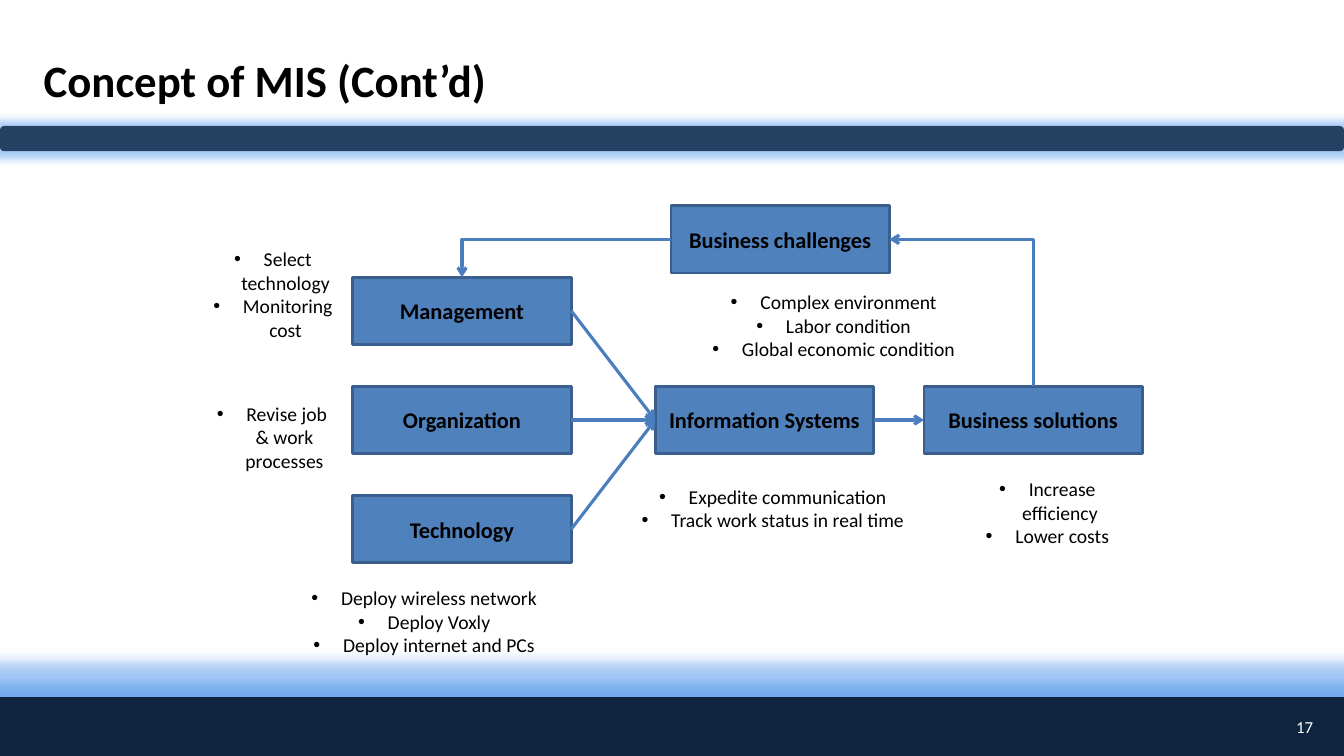
from pptx import Presentation
from pptx.dml.color import RGBColor
from pptx.enum.shapes import MSO_CONNECTOR as CONN, MSO_SHAPE as SHAPE
from pptx.enum.text import MSO_ANCHOR as ANCHOR, PP_ALIGN as ALIGN
from pptx.oxml.ns import qn
from pptx.util import Emu, Pt
from lxml.etree import SubElement

SCALE = 9525  # EMU in one px
FONT = "Calibri"
BLACK = RGBColor(0x00, 0x00, 0x00)
WHITE = RGBColor(0xFF, 0xFF, 0xFF)
NAVY = RGBColor(0x0F, 0x24, 0x3E)
SLATE = RGBColor(0x25, 0x40, 0x61)
GLOW = RGBColor(0x25, 0x7C, 0xE6)
BOX_FILL = RGBColor(0x4F, 0x81, 0xBD)
BOX_LINE = RGBColor(0x3A, 0x5F, 0x8C)
ARROW = RGBColor(0x4B, 0x7E, 0xBC)

BOX_W, BOX_H = 208, 64
BULLET_INDENT = 24

# Name: left, top
BOXES = {
    "Management": (336, 264),
    "Organization": (336, 368),
    "Technology": (336, 472),
    "Information Systems": (624, 368),
    "Business challenges": (639, 196),
    "Business solutions": (880, 368),
}

# Left, top, width, height, bullet items
NOTES = [
    (191, 376, 136, 80, ["Revise job & work processes"]),
    (192, 232, 136, 96, ["Select technology", "Monitoring cost"]),
    (248, 552, 312, 80, ["Deploy wireless network", "Deploy Voxly",
                         "Deploy internet and PCs"]),
    (600, 456, 272, 56, ["Expedite communication",
                         "Track work status in real time"]),
    (660, 278, 268, 64, ["Complex environment", "Labor condition",
                         "Global economic condition"]),
    (907, 456, 181, 64, ["Increase efficiency", "Lower costs"]),
]


def px(n):
    return Emu(int(n * SCALE))


def write(tf, lines, size=14, color=BLACK, bold=False, align=ALIGN.CENTER,
          bullet=False):
    tf.word_wrap = True
    tf.vertical_anchor = ANCHOR.MIDDLE
    for i, line in enumerate(lines):
        p = tf.paragraphs[0] if i == 0 else tf.add_paragraph()
        p.alignment = align
        r = p.add_run()
        r.text = " " + line if bullet else line
        r.font.name, r.font.size, r.font.bold = FONT, Pt(size), bold
        r.font.color.rgb = color
        if bullet:
            pPr = p._p.get_or_add_pPr()
            pPr.set("marL", str(px(BULLET_INDENT)))
            pPr.set("indent", str(-px(BULLET_INDENT)))
            SubElement(pPr, qn("a:buFont"), typeface="Arial")
            SubElement(pPr, qn("a:buChar"), char="•")


def add_block(s, kind, x, y, w, h, fill, line=None):
    sp = s.shapes.add_shape(kind, px(x), px(y), px(w), px(h))
    sp.shadow.inherit = False
    sp.fill.solid()
    sp.fill.fore_color.rgb = fill
    if line is None:
        sp.line.fill.background()
    else:
        sp.line.color.rgb = line
        sp.line.width = Pt(2)
    return sp


def add_glow(sp, radius):
    effects = sp._element.spPr.find(qn("a:effectLst"))
    glow = SubElement(effects, qn("a:glow"), rad=str(px(radius)))
    color = SubElement(glow, qn("a:srgbClr"), val=str(GLOW))
    SubElement(color, qn("a:alpha"), val="40000")


def add_note(s, x, y, w, h, lines, **fmt):
    sp = s.shapes.add_textbox(px(x), px(y), px(w), px(h))
    write(sp.text_frame, lines, **fmt)


def add_arrow(s, start, end, bent=False, arrow_end="tailEnd"):
    kind = CONN.ELBOW if bent else CONN.STRAIGHT
    c = s.shapes.add_connector(kind, *map(px, start + end))
    c.line.color.rgb = ARROW
    c.line.width = Pt(2.25)
    spPr = c._element.spPr
    if bent:  # one corner: across first, then down
        spPr.find(qn("a:prstGeom")).set("prst", "bentConnector2")
    SubElement(c.line._get_or_add_ln(), qn("a:" + arrow_end), type="arrow")
    SubElement(spPr, qn("a:effectLst"))


def side(name, fx, fy):
    """Point on a box, as fractions of its width and height."""
    x, y = BOXES[name]
    return x + BOX_W * fx, y + BOX_H * fy


def main():
    prs = Presentation()
    prs.slide_width, prs.slide_height = px(1280), px(720)
    s = prs.slides.add_slide(prs.slide_layouts[5])

    # Footer and header bars
    add_glow(add_block(s, SHAPE.RECTANGLE, 0, 664, 1280, 56, NAVY), 24)
    add_glow(add_block(s, SHAPE.ROUNDED_RECTANGLE, 0, 120, 1280, 24, SLATE), 15)

    # Title
    title = s.shapes.title
    title.left, title.top = px(32), px(40)
    title.width, title.height = px(1110), px(72)
    write(title.text_frame, ["Concept of MIS (Cont’d)"], size=32, bold=True,
          align=ALIGN.LEFT)

    # Boxes
    for name, (x, y) in BOXES.items():
        sp = add_block(s, SHAPE.RECTANGLE, x, y, BOX_W, BOX_H, BOX_FILL, BOX_LINE)
        write(sp.text_frame, [name], size=16, bold=True)

    # Arrows
    systems = side("Information Systems", 0, 0.5)
    for name in ("Management", "Organization", "Technology"):
        add_arrow(s, side(name, 1, 0.5), systems)
    add_arrow(s, side("Information Systems", 1, 0.5),
              side("Business solutions", 0, 0.5))
    add_arrow(s, side("Business challenges", 0, 0.5),
              side("Management", 0.5, 0), bent=True)
    add_arrow(s, side("Business challenges", 1, 0.5),
              side("Business solutions", 0.5, 0), bent=True,
              arrow_end="headEnd")

    # Bulleted notes and page number
    for x, y, w, h, lines in NOTES:
        add_note(s, x, y, w, h, lines, bullet=True)
    add_note(s, 1206, 672, 54, 40, ["17"], size=12, color=WHITE,
             align=ALIGN.RIGHT)

    prs.save("out.pptx")


if __name__ == "__main__":
    main()
